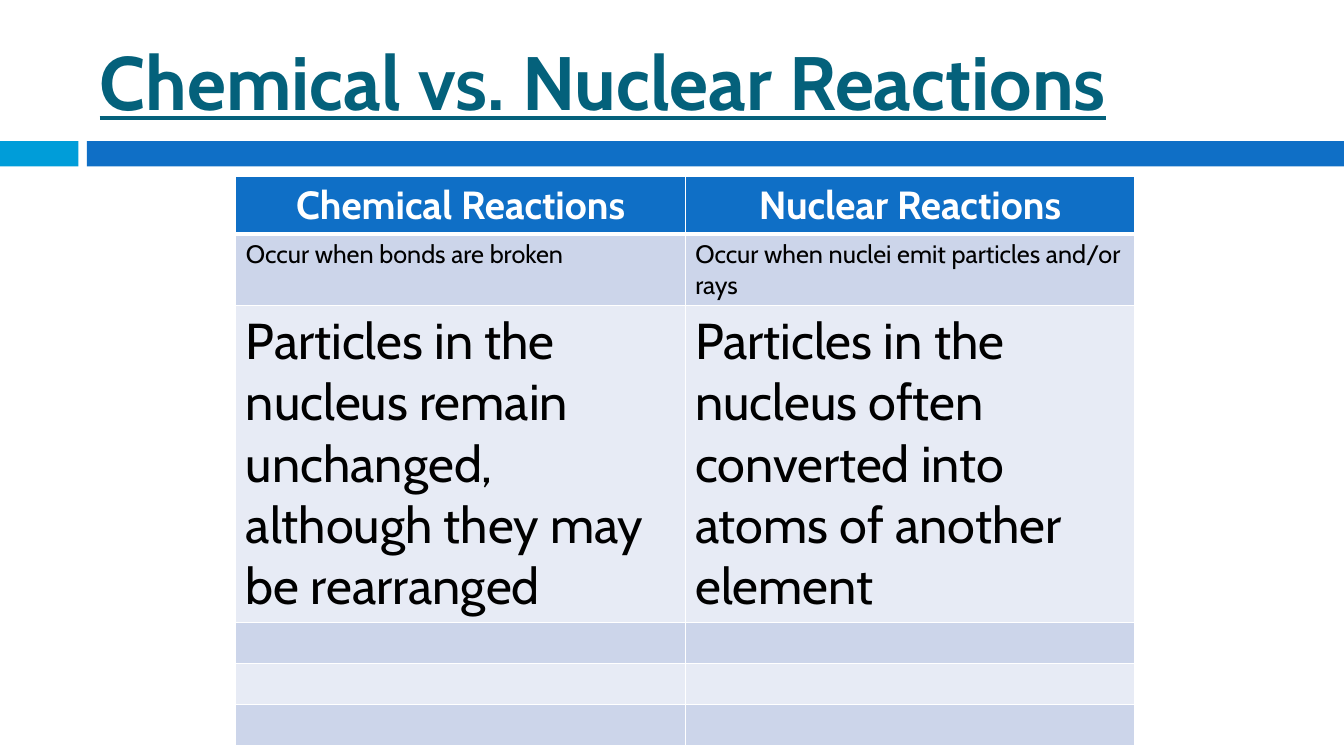
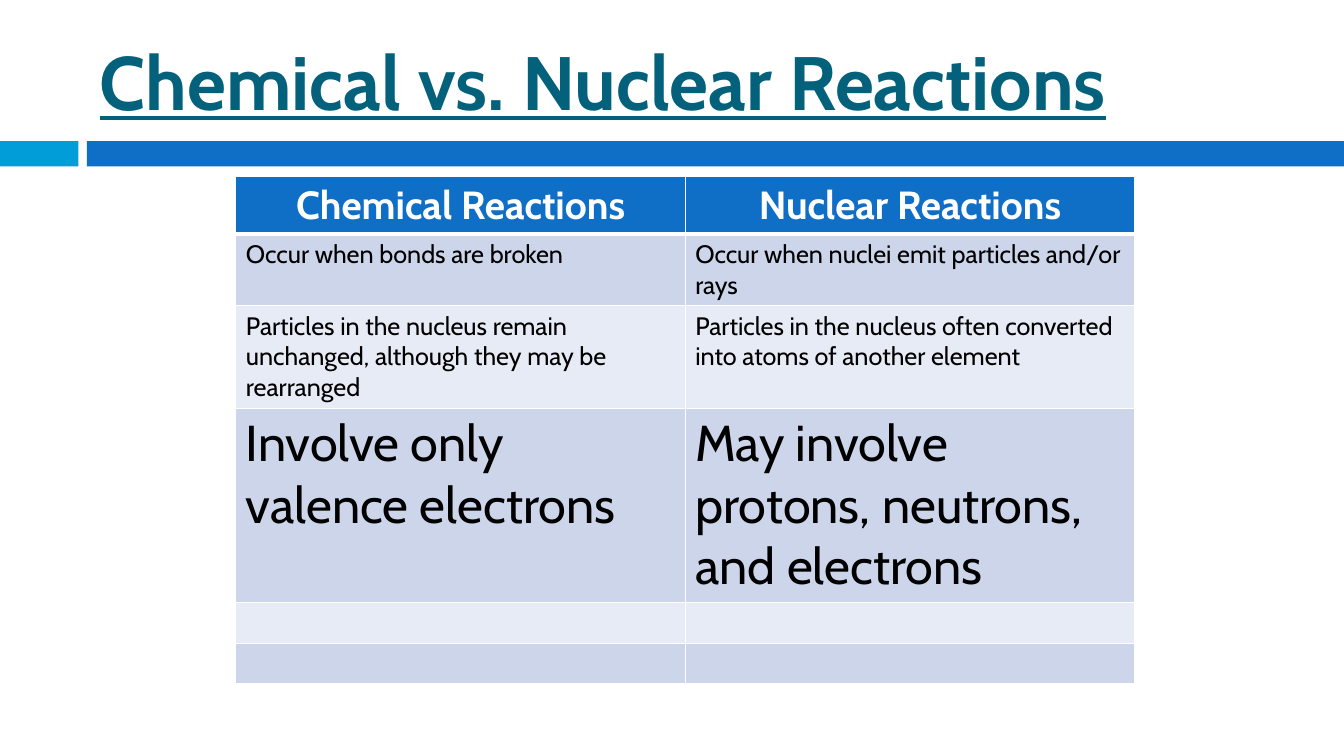
from dataclasses import dataclass

from lxml import etree
from pptx import Presentation
from pptx.dml.color import RGBColor
from pptx.enum.shapes import MSO_SHAPE
from pptx.enum.text import MSO_ANCHOR, MSO_AUTO_SIZE, PP_ALIGN
from pptx.oxml.ns import qn
from pptx.util import Pt

RECTANGLE = MSO_SHAPE.RECTANGLE
MIDDLE = MSO_ANCHOR.MIDDLE
NO_AUTOFIT = MSO_AUTO_SIZE.NONE
LEFT = PP_ALIGN.LEFT
CENTER = PP_ALIGN.CENTER
TITLE_ONLY = 5


@dataclass(frozen=True)
class Theme:
    font: str = "Cabin"
    title: str = "04617B"
    accent: str = "009DD9"
    primary: str = "0F6FC6"
    white: str = "FFFFFF"
    text: str = "000000"
    stripes: tuple = ("CCD5EA", "E7EBF5")
    title_size: int = 54
    header_size: int = 28
    body_size: int = 18
    newest_size: int = 36
    rule: int = 1
    header_rule: int = 3


THEME = Theme()
SLIDE_WIDTH, SLIDE_HEIGHT = 960, 540
BAND_TOP, BAND_HEIGHT = 100.8, 18
ACCENT_WIDTH, BAND_LEFT = 56, 62
TABLE_LEFT, TABLE_TOP = 168.5, 126
COLUMN_WIDTH, ROW_HEIGHT, ROW_COUNT = 321, 29.2, 6

TITLE = "Chemical vs. Nuclear Reactions"
HEADERS = ("Chemical Reactions", "Nuclear Reactions")
COMPARISONS = (
    ("Occur when bonds are broken",
     "Occur when nuclei emit particles and/or rays"),
    ("Particles in the nucleus remain unchanged, although they may be rearranged",
     "Particles in the nucleus often converted into atoms of another element"),
    ("Involve only valence electrons",
     "May involve protons, neutrons, and electrons"),
)


def write_text(frame, text, size, color, align=LEFT, bold=False, underline=False):
    frame.text = text
    paragraph = frame.paragraphs[0]
    paragraph.alignment = align
    for run in paragraph.runs:
        font = run.font
        font.name = THEME.font
        font.size = Pt(size)
        font.bold = bold
        font.underline = underline
        font.color.rgb = RGBColor.from_string(color)


def add_title(slide):
    title = slide.shapes.title
    title.left, title.top, title.width, title.height = Pt(64), Pt(18), Pt(856), Pt(78)
    frame = title.text_frame
    frame.word_wrap = True
    frame.auto_size = NO_AUTOFIT
    frame.vertical_anchor = MIDDLE
    write_text(frame, TITLE, THEME.title_size, THEME.title, bold=True, underline=True)


def add_band(slide, left, width, color):
    band = slide.shapes.add_shape(
        RECTANGLE, Pt(left), Pt(BAND_TOP), Pt(width), Pt(BAND_HEIGHT))
    band.shadow.inherit = False
    band.fill.solid()
    band.fill.fore_color.rgb = RGBColor.from_string(color)
    band.line.fill.background()


def set_borders(cell, top, bottom):
    properties = cell._tc.get_or_add_tcPr()
    widths = {"a:lnL": THEME.rule, "a:lnR": THEME.rule, "a:lnT": top, "a:lnB": bottom}
    for tag, width in widths.items():
        border = etree.SubElement(properties, qn(tag), w=str(Pt(width)))
        fill = etree.SubElement(border, qn("a:solidFill"))
        etree.SubElement(fill, qn("a:srgbClr"), val=THEME.white)


def style_cell(cell, row):
    set_borders(cell,
                THEME.header_rule if row == 1 else THEME.rule,
                THEME.header_rule if row == 0 else THEME.rule)
    color = THEME.primary if row == 0 else THEME.stripes[(row - 1) % 2]
    cell.fill.solid()
    cell.fill.fore_color.rgb = RGBColor.from_string(color)


def add_comparison_table(slide, comparisons):
    columns = len(HEADERS)
    table = slide.shapes.add_table(
        ROW_COUNT, columns, Pt(TABLE_LEFT), Pt(TABLE_TOP),
        Pt(COLUMN_WIDTH * columns), Pt(ROW_HEIGHT * ROW_COUNT)).table
    for column in table.columns:
        column.width = Pt(COLUMN_WIDTH)
    for index, row in enumerate(table.rows):
        row.height = Pt(ROW_HEIGHT)
        for cell in row.cells:
            style_cell(cell, index)
    for column, header in enumerate(HEADERS):
        write_text(table.cell(0, column).text_frame, header,
                   THEME.header_size, THEME.white, CENTER, bold=True)
    for index, statements in enumerate(comparisons, start=1):
        size = THEME.newest_size if index == len(comparisons) else THEME.body_size
        for column, statement in enumerate(statements):
            write_text(table.cell(index, column).text_frame, statement,
                       size, THEME.text)


def add_comparison_slide(deck, comparisons):
    slide = deck.slides.add_slide(deck.slide_layouts[TITLE_ONLY])
    add_band(slide, 0, ACCENT_WIDTH, THEME.accent)
    add_band(slide, BAND_LEFT, SLIDE_WIDTH - BAND_LEFT, THEME.primary)
    add_title(slide)
    add_comparison_table(slide, comparisons)


def main():
    deck = Presentation()
    deck.slide_width, deck.slide_height = Pt(SLIDE_WIDTH), Pt(SLIDE_HEIGHT)
    for shown in (2, 3):
        add_comparison_slide(deck, COMPARISONS[:shown])
    deck.save("out.pptx")


if __name__ == "__main__":
    main()
